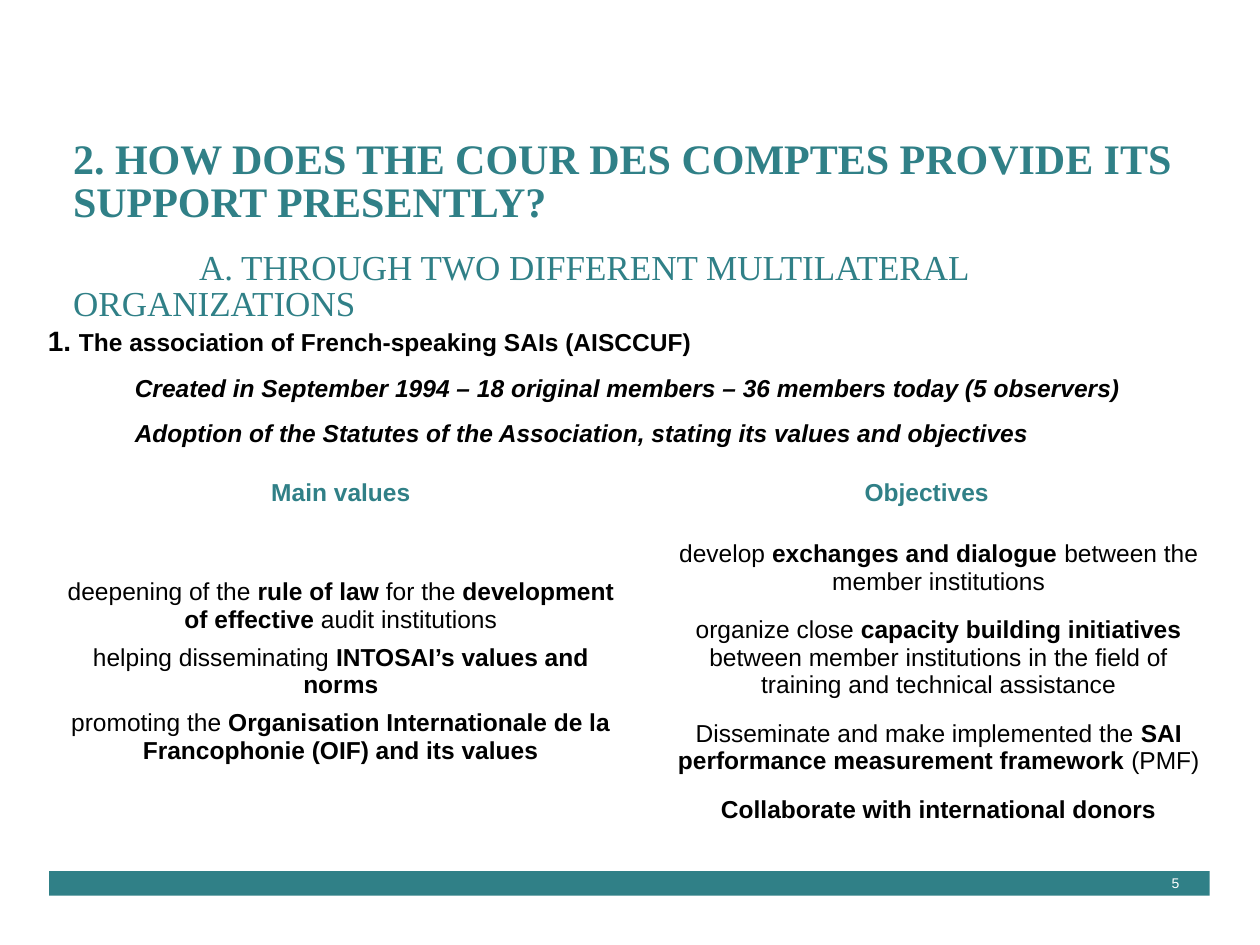
from pptx import Presentation
from pptx import util as u
from pptx.dml.color import RGBColor
from pptx.enum import shapes, text

HUES = {"teal": "308087", "ink": "000000", "paper": "FFFFFF"}
SANS, SERIF = "Arial", "Times New Roman"
LEFT, MID, RIGHT = text.PP_ALIGN.LEFT, text.PP_ALIGN.CENTER, text.PP_ALIGN.RIGHT
TOP, CENTER = text.MSO_ANCHOR.TOP, text.MSO_ANCHOR.MIDDLE
BAR_TOP, BAR_TALL = 6.91, 0.2


class Deck:
    def __init__(self, wide, tall):
        self.file = Presentation()
        self.file.slide_width = u.Inches(wide)
        self.file.slide_height = u.Inches(tall)
        self.slide = self.file.slides.add_slide(self.file.slide_layouts[5])

    def hue(self, name):
        return RGBColor.from_string(HUES[name])

    def box(self, *at):
        return [u.Inches(n) for n in at]

    def frame(self, frame, anchor=TOP, left=0, top=0, right=0, bottom=0):
        values = {
            "word_wrap": True,
            "auto_size": text.MSO_AUTO_SIZE.NONE,
            "vertical_anchor": anchor,
            "margin_left": u.Inches(left),
            "margin_top": u.Inches(top),
            "margin_right": u.Inches(right),
            "margin_bottom": u.Inches(bottom),
        }
        for key, value in values.items():
            setattr(frame, key, value)
        return frame

    def line(self, frame, words, size=14, face=SANS, hue="ink", italic=False,
             align=LEFT, before=0, after=0, space=1.0, indent=0, first=0):
        para = frame.paragraphs[0]
        if para.runs:
            para = frame.add_paragraph()
        else:
            before = 0
        values = {
            "alignment": align,
            "space_before": u.Pt(before),
            "space_after": u.Pt(after),
            "line_spacing": space,
        }
        for key, value in values.items():
            setattr(para, key, value)
        props = para._p.get_or_add_pPr()
        props.set("marL", str(u.Inches(indent)))
        props.set("indent", str(u.Inches(first)))
        for spot, part in enumerate(words.split("*")):
            if part:
                self.run(para, part, size, face, hue, spot % 2 == 1, italic)
        return para

    def run(self, para, words, size, face, hue, bold, italic=False):
        run = para.add_run()
        run.text = words
        values = {"size": u.Pt(size), "name": face, "bold": bold, "italic": italic}
        for key, value in values.items():
            setattr(run.font, key, value)
        run.font.color.rgb = self.hue(hue)

    def title(self, *at):
        shape = self.slide.shapes.title
        shape.left, shape.top, shape.width, shape.height = self.box(*at)
        return self.frame(shape.text_frame, top=0.04)

    def label(self, *at, **inset):
        shape = self.slide.shapes.add_textbox(*self.box(*at))
        return self.frame(shape.text_frame, **inset)

    def bar(self, *at):
        shape = self.slide.shapes.add_shape(
            shapes.MSO_SHAPE.RECTANGLE, *self.box(*at))
        shape.shadow.inherit = False
        shape.fill.solid()
        shape.fill.fore_color.rgb = self.hue("teal")
        shape.line.fill.background()

    def table(self, at, rows, cols):
        table = self.slide.shapes.add_table(
            len(rows), len(cols), *self.box(*at)).table
        table.first_row = table.horz_banding = False
        for row, tall in zip(table.rows, rows):
            row.height = u.Inches(tall)
        for col, wide in zip(table.columns, cols):
            col.width = u.Inches(wide)
        for cell in table.iter_cells():
            cell.fill.background()
        return table


def main():
    deck = Deck(10, 7.5)
    deck.bar(0.39, BAR_TOP, 9.21, BAR_TALL)

    head = deck.title(0.58, 1.07, 8.74, 1.79)
    look = {"face": SERIF, "hue": "teal", "space": 0.85}
    deck.line(head, "*2. HOW DOES THE COUR DES COMPTES PROVIDE ITS SUPPORT PRESENTLY?*",
              24, **look)
    deck.line(head, "A. THROUGH TWO DIFFERENT MULTILATERAL ORGANIZATIONS",
              20, before=15, first=1, **look)

    body = deck.label(0.38, 2.57, 9.1, 1.14)
    lead = deck.line(body, "*1. *", 16, after=9)
    deck.run(lead, "The association of French-speaking SAIs (AISCCUF)",
             14, SANS, "ink", True)
    for words in (
        "*Created in September 1994 – 18 original members – 36 members today (5 observers)*",
        "*Adoption of the Statutes of the Association, stating its values and objectives*",
    ):
        deck.line(body, words, italic=True, after=9, indent=0.69)

    page = deck.label(8.62, BAR_TOP, 0.98, BAR_TALL, anchor=CENTER, right=0.24)
    deck.line(page, "5", 8, hue="paper", align=RIGHT)

    table = deck.table((0.38, 3.75, 9.3, 3.16), (0.49, 2.67), (4.65, 4.65))
    columns = (
        ("Main values", 0.35, {"before": 6}, (
            "deepening of the *rule of law *for the *development of effective* audit institutions",
            "helping disseminating *INTOSAI’s values and norms*",
            "promoting the *Organisation Internationale de la Francophonie (OIF) and its values*",
        )),
        ("Objectives", 0.05, {"before": 12, "indent": 0.19}, (
            "develop *exchanges and dialogue* between the member institutions",
            "organize close *capacity building initiatives* between member institutions"
            " in the field of training and technical assistance",
            "Disseminate and make implemented the *SAI performance measurement framework *(PMF)",
            "*Collaborate with international donors*",
        )),
    )
    for col, (name, inset, look, items) in enumerate(columns):
        deck.line(table.cell(0, col).text_frame, f"*{name}*", hue="teal", align=MID)
        cell = table.cell(1, col)
        cell.margin_top = u.Inches(inset)
        for words in items:
            deck.line(cell.text_frame, words, align=MID, **look)

    deck.file.save("out.pptx")


if __name__ == "__main__":
    main()
